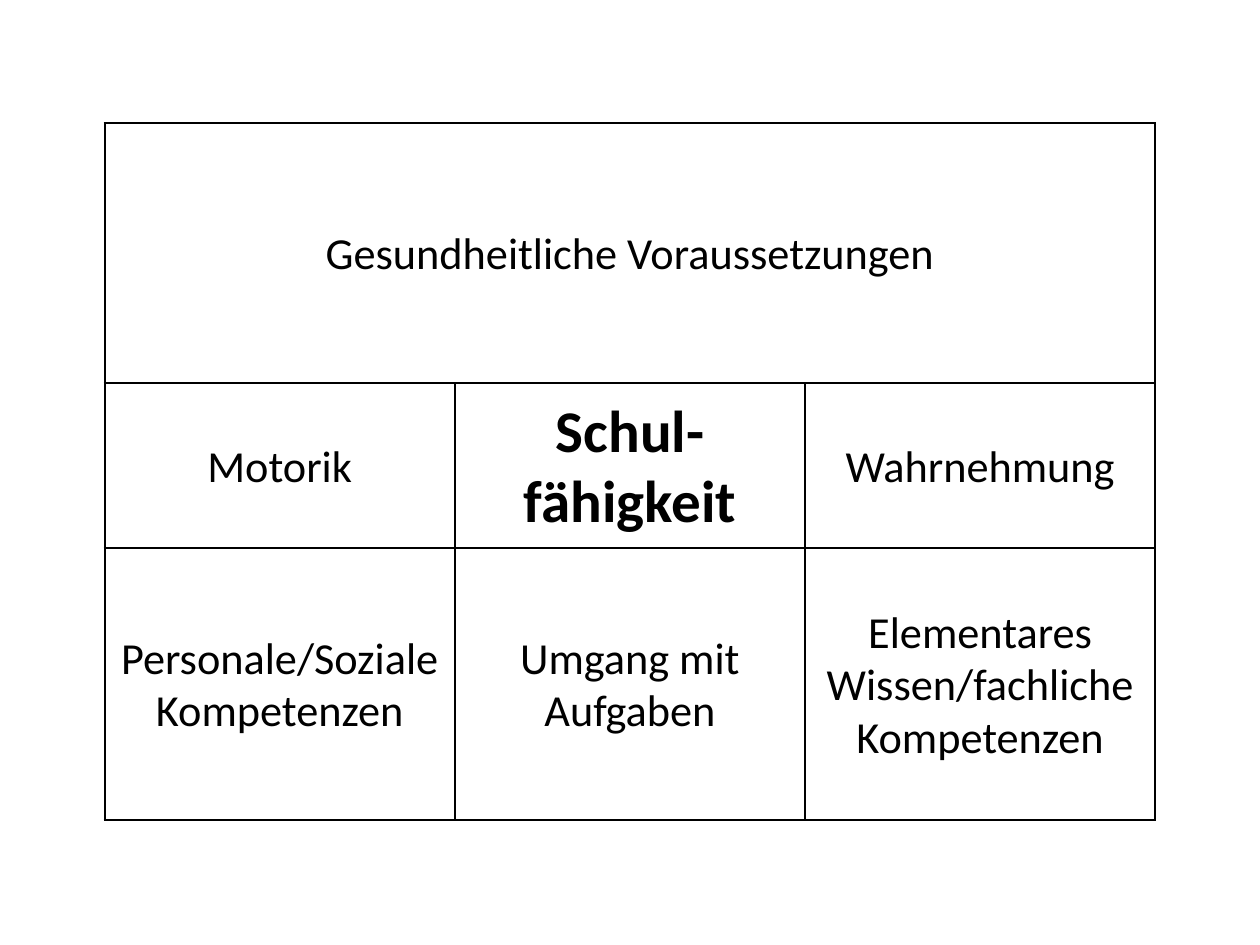
from dataclasses import dataclass

from lxml.etree import SubElement
from pptx import Presentation
from pptx.dml.color import RGBColor
from pptx.enum.text import MSO_ANCHOR, PP_ALIGN
from pptx.oxml.ns import qn
from pptx.util import Cm, Pt


@dataclass(frozen=True)
class Theme:
    font: str = "Calibri"
    ink: str = "000000"
    paper: str = "FFFFFF"
    body_size: int = 36
    core_size: int = 48
    border_width: float = 1.93
    line_spacing: float = 0.97


def add_borders(cell, theme):
    properties = cell._tc.get_or_add_tcPr()
    for position, side in enumerate(("lnL", "lnR", "lnT", "lnB")):
        line = SubElement(properties, qn(f"a:{side}"), w=str(Pt(theme.border_width)))
        fill = SubElement(line, qn("a:solidFill"))
        SubElement(fill, qn("a:srgbClr"), val=theme.ink)
        properties.insert(position, line)


theme = Theme()
core = "Schul-fähigkeit"
rows = [
    ["Gesundheitliche Voraussetzungen", "", ""],
    ["Motorik", core, "Wahrnehmung"],
    ["Personale/Soziale Kompetenzen", "Umgang mit Aufgaben",
     "Elementares Wissen/fachliche Kompetenzen"],
]
row_heights = [Cm(7.45), Cm(4.73), Cm(7.8)]
column_width = Cm(10.04)

presentation = Presentation()
presentation.slide_width = Cm(36.12)
presentation.slide_height = Cm(27.08)
slide = presentation.slides.add_slide(presentation.slide_layouts[6])

table = slide.shapes.add_table(
    len(rows), len(rows[0]), Cm(3), Cm(3.53),
    column_width * len(rows[0]), sum(row_heights)).table
table.first_row = False
table.horz_banding = False
for column in table.columns:
    column.width = column_width
for row, height in zip(table.rows, row_heights):
    row.height = height
table.cell(0, 0).merge(table.cell(0, 2))

for row, texts in zip(table.rows, rows):
    for cell, text in zip(row.cells, texts):
        cell.fill.solid()
        cell.fill.fore_color.rgb = RGBColor.from_string(theme.paper)
        add_borders(cell, theme)
        if cell.is_spanned:
            continue
        cell.text = text
        cell.vertical_anchor = MSO_ANCHOR.MIDDLE
        cell.margin_left = cell.margin_right = cell.margin_bottom = Cm(0.15)
        cell.margin_top = Cm(0.2 if text == core else 0.18)
        paragraph = cell.text_frame.paragraphs[0]
        paragraph.alignment = PP_ALIGN.CENTER
        paragraph.line_spacing = theme.line_spacing
        paragraph.font.name = theme.font
        paragraph.font.size = Pt(theme.core_size if text == core else theme.body_size)
        paragraph.font.bold = text == core
        paragraph.font.color.rgb = RGBColor.from_string(theme.ink)

presentation.save("out.pptx")
